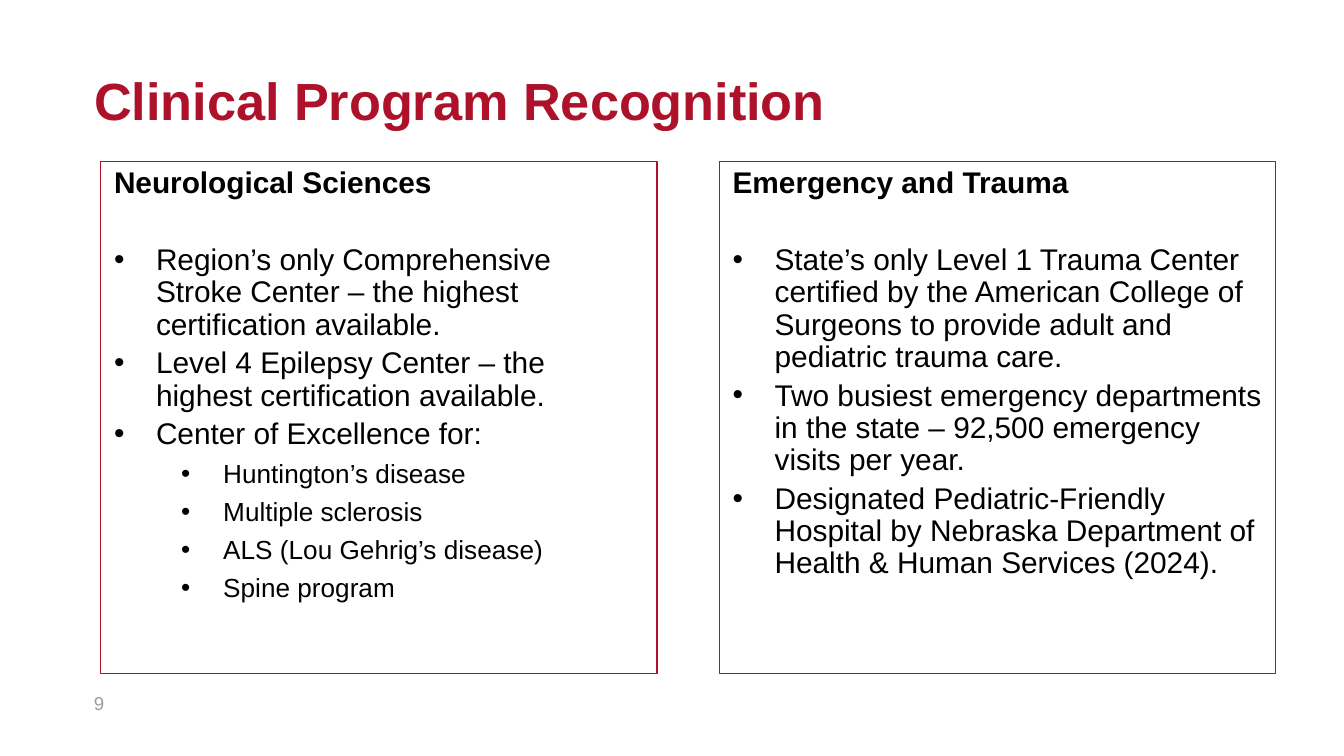
from lxml import etree
from pptx import Presentation
from pptx import util as u
from pptx.dml.color import RGBColor
from pptx.enum import shapes, text
from pptx.oxml import ns

Pt = u.Pt

# Content: each panel is a heading and (level, text) bullets
TITLE = "Clinical Program Recognition"
PAGE_NUMBER = "9"
PANELS = [
    ("Neurological Sciences", [
        (0, "Region’s only Comprehensive Stroke Center – the highest certification available."),
        (0, "Level 4 Epilepsy Center – the highest certification available."),
        (0, "Center of Excellence for:"),
        (1, "Huntington’s disease"),
        (1, "Multiple sclerosis"),
        (1, "ALS (Lou Gehrig’s disease)"),
        (1, "Spine program"),
    ]),
    ("Emergency and Trauma", [
        (0, "State’s only Level 1 Trauma Center certified by the American College of "
            "Surgeons to provide adult and pediatric trauma care."),
        (0, "Two busiest emergency departments in the state – 92,500 emergency visits per year."),
        (0, "Designated Pediatric-Friendly Hospital by Nebraska Department of "
            "Health & Human Services (2024)."),
    ]),
]

# Style
FONT = "Arial"
RED = RGBColor(0xAD, 0x12, 0x2A)
BLACK = RGBColor(0, 0, 0)
GRAY = RGBColor(0x98, 0x9E, 0xA3)
LEVEL_SIZES = (16, 14)
LEVEL_SPACING = (0.9, 1.0)
LEVEL_INDENTS = (22.5, 58.5)
HANGING = 22.5
GAP = 3.5          # space before a bullet
HEADING_GAP = 24   # space between heading and first bullet

# Panel grid
PANEL_LEFT, PANEL_TOP = 54, 86.4
PANEL_WIDTH, PANEL_HEIGHT = 298, 274.3
PANEL_PITCH = 331.4


def style(para, size, color, bold=False, spacing=1.0):
    para.alignment = text.PP_ALIGN.LEFT
    para.line_spacing = spacing
    para.font.name = FONT
    para.font.size = Pt(size)
    para.font.bold = bold
    para.font.color.rgb = color


def add_bullet(para, indent):
    props = para._p.get_or_add_pPr()
    props.set("marL", str(Pt(indent)))
    props.set("indent", str(-Pt(HANGING)))
    etree.SubElement(props, ns.qn("a:buFont")).set("typeface", FONT)
    etree.SubElement(props, ns.qn("a:buChar")).set("char", "•")


def add_panel(page, left, heading, bullets):
    panel = page.shapes.add_shape(
        shapes.MSO_SHAPE.RECTANGLE,
        Pt(left), Pt(PANEL_TOP), Pt(PANEL_WIDTH), Pt(PANEL_HEIGHT))
    panel.shadow.inherit = False
    panel.fill.background()
    panel.line.color.rgb = RED
    panel.line.width = Pt(0.75)
    frame = panel.text_frame
    frame.word_wrap = True
    frame.vertical_anchor = text.MSO_ANCHOR.TOP

    para = frame.paragraphs[0]
    para.text = heading
    style(para, LEVEL_SIZES[0], BLACK, bold=True, spacing=0.9)
    for index, (level, line) in enumerate(bullets):
        para = frame.add_paragraph()
        para.text = line
        para.level = level
        add_bullet(para, LEVEL_INDENTS[level])
        para.space_before = Pt(GAP if index else HEADING_GAP)
        style(para, LEVEL_SIZES[level], BLACK, spacing=LEVEL_SPACING[level])


deck = Presentation()
deck.slide_width, deck.slide_height = Pt(720), Pt(405)
page = deck.slides.add_slide(deck.slide_layouts[5])

# Title
title = page.shapes.title
title.left, title.top, title.width, title.height = Pt(43.2), Pt(40.3), Pt(640), Pt(41)
frame = title.text_frame
frame.text = TITLE
frame.word_wrap = True
frame.auto_size = text.MSO_AUTO_SIZE.NONE
frame.margin_top = frame.margin_bottom = 0
frame.vertical_anchor = text.MSO_ANCHOR.TOP
style(frame.paragraphs[0], 28, RED, bold=True, spacing=0.9)

# Panels
for column, (heading, bullets) in enumerate(PANELS):
    add_panel(page, PANEL_LEFT + column * PANEL_PITCH, heading, bullets)

# Page number
number = page.shapes.add_textbox(Pt(43.2), Pt(368), Pt(39.6), Pt(17.3))
number.text_frame.word_wrap = True
number.text_frame.vertical_anchor = text.MSO_ANCHOR.MIDDLE
number.text_frame.text = PAGE_NUMBER
style(number.text_frame.paragraphs[0], 10, GRAY)

deck.save("out.pptx")
